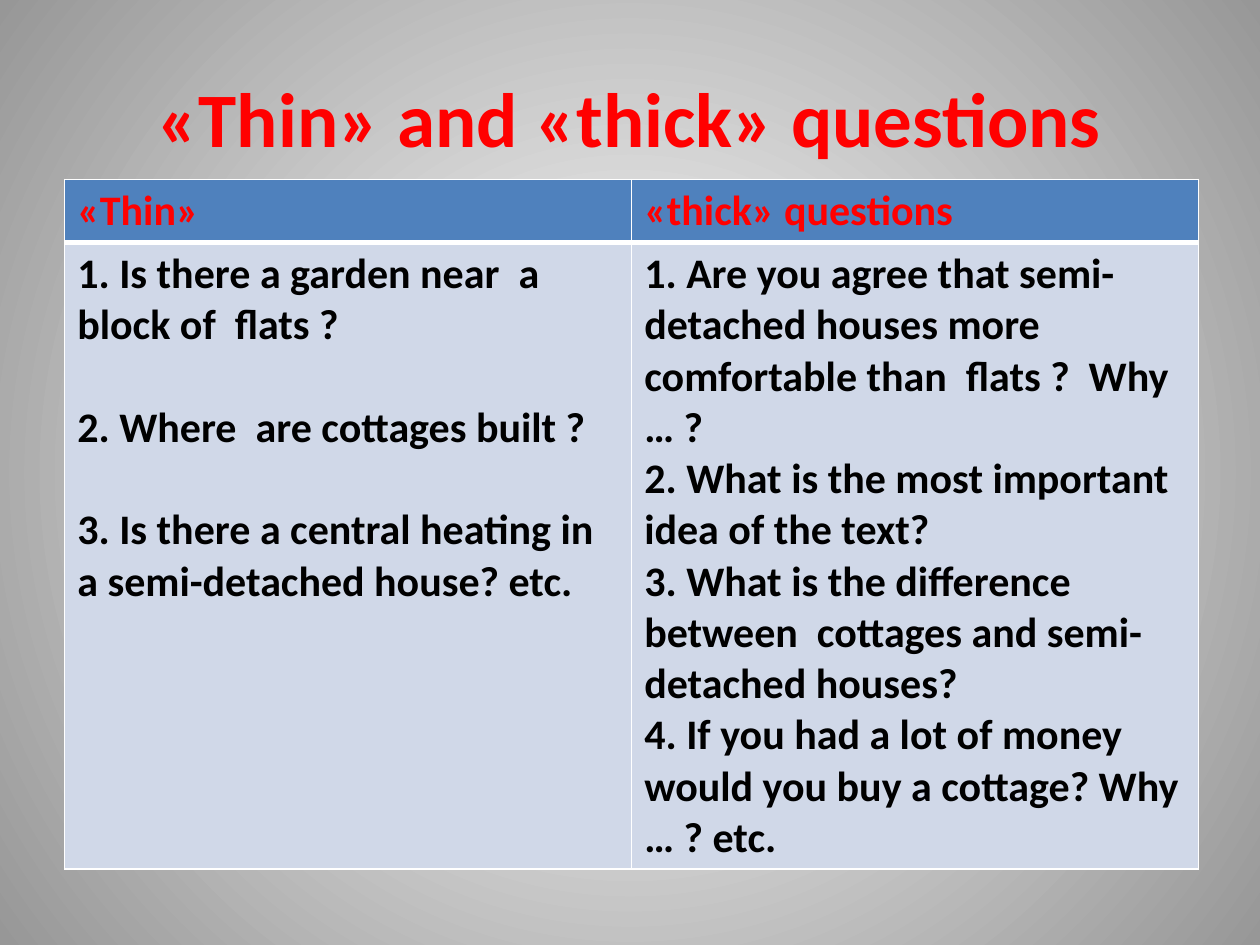
"""Build a slide comparing thin and thick questions in a two-column table."""
import lxml.etree
import pptx
import pptx.dml.color
import pptx.enum.text
import pptx.oxml.ns
import pptx.util

Pt = pptx.util.Pt
qn = pptx.oxml.ns.qn


def color(value):
    """Return a colour from its hex string."""
    return pptx.dml.color.RGBColor.from_string(value)


def add_border(cell, side, width):
    """Draw a white line along one side of a cell."""
    properties = cell._tc.get_or_add_tcPr()
    line = lxml.etree.Element(qn("a:" + side), w=str(Pt(width)))
    solid = lxml.etree.SubElement(line, qn("a:solidFill"))
    lxml.etree.SubElement(solid, qn("a:srgbClr"), val="FFFFFF")
    properties.insert(len(properties.xpath("a:lnL|a:lnR|a:lnT|a:lnB")), line)


deck = pptx.Presentation()
deck.slide_width, deck.slide_height = Pt(720), Pt(540)
page = deck.slides.add_slide(deck.slide_layouts[6])

backdrop = page.background.fill
backdrop.gradient()
for stop, shade in zip(backdrop.gradient_stops, ("FFFFFF", "979797")):
    stop.color.rgb = color(shade)
gradient = page._element.xpath(".//a:gradFill")[0]
gradient.remove(gradient.find(qn("a:lin")))
circle = lxml.etree.SubElement(gradient, qn("a:path"), path="circle")
lxml.etree.SubElement(circle, qn("a:fillToRect"), l="50000", t="50000", r="50000", b="50000")

title = page.shapes.add_textbox(Pt(36), Pt(21.6), Pt(648), Pt(90))
title.text_frame.word_wrap = True
title.text_frame.vertical_anchor = pptx.enum.text.MSO_ANCHOR.MIDDLE
para = title.text_frame.paragraphs[0]
para.text = "«Thin» and «thick» questions"
para.alignment = pptx.enum.text.PP_ALIGN.CENTER
para.font.name, para.font.size, para.font.bold = "Calibri", Pt(44), True
para.font.color.rgb = color("FF0000")

thin = [
    "1. Is there a garden near  a  block of  flats ?",
    "2. Where  are cottages built ?",
    "3. Is there a central heating in a semi-detached house? etc.",
]
thick = [
    "1. Are you agree that semi-detached houses more  comfortable than  flats ?  Why … ?",
    "2. What is the most important idea of the text?",
    "3. What is the difference between  cottages and semi-detached houses?",
    "4. If you had a lot of money would you buy a cottage? Why … ? etc.",
]
rows = [
    (36, "4F81BD", "FF0000", [["«Thin»"], ["«thick» questions"]]),
    (358, "D0D8E8", "000000", [thin, thick]),
]
table = page.shapes.add_table(2, 2, Pt(37), Pt(102.5), Pt(648), Pt(394)).table
for row, (height, fill, ink, contents) in enumerate(rows):
    table.rows[row].height = Pt(height)
    for column, lines in enumerate(contents):
        cell = table.cell(row, column)
        cell.fill.solid()
        cell.fill.fore_color.rgb = color(fill)
        cell.text = "\n".join(lines)
        for number, para in enumerate(cell.text_frame.paragraphs):
            para.font.name, para.font.size, para.font.bold = "Calibri", Pt(24), True
            para.font.color.rgb = color(ink)
            if lines is thin and number:
                para.space_before = Pt(29.3)
        for side in ("lnL", "lnR", "lnT", "lnB"):
            between_rows = side == ("lnB", "lnT")[row]
            add_border(cell, side, 3 if between_rows else 1)

deck.save("out.pptx")
